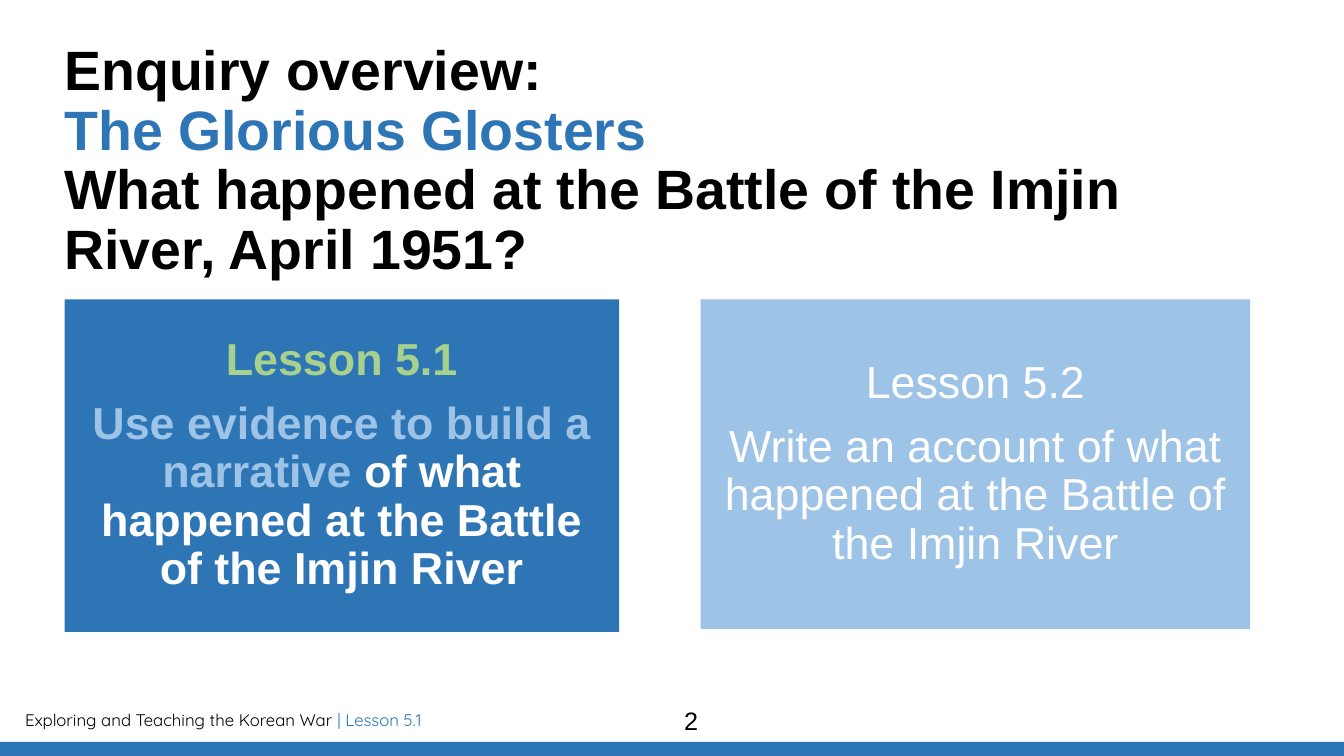
from pptx import Presentation
from pptx.dml.color import RGBColor
from pptx.enum.shapes import MSO_SHAPE
from pptx.enum.text import MSO_ANCHOR, MSO_AUTO_SIZE, PP_ALIGN
from pptx.util import Pt

RECT = MSO_SHAPE.RECTANGLE
TOP, MIDDLE = MSO_ANCHOR.TOP, MSO_ANCHOR.MIDDLE
LEFT, CENTER = PP_ALIGN.LEFT, PP_ALIGN.CENTER
FIXED = MSO_AUTO_SIZE.NONE
SCALE = 9144
BLUE, PALE, GREEN = "2E75B6", "9DC3E6", "A9D18E"
BLACK, WHITE = "000000", "FFFFFF"


def px(*sizes):
    return [size * SCALE for size in sizes]


def tint(target, color):
    target.rgb = RGBColor.from_string(color)


def style(para, size, name="Arial", bold=False, align=LEFT):
    para.alignment = align
    para.font.size = Pt(size)
    para.font.name = name
    para.font.bold = bold


def write(para, parts):
    for text, color in parts:
        run = para.add_run()
        run.text = text
        tint(run.font.color, color)


def pad(frame, size):
    frame.margin_left, frame.margin_top, frame.margin_right, frame.margin_bottom = px(*[size] * 4)


def heading(slide, area, lines):
    title = slide.shapes.title
    title.left, title.top, title.width, title.height = px(*area)
    frame = title.text_frame
    frame.word_wrap = True
    frame.auto_size = FIXED
    frame.vertical_anchor = TOP
    pad(frame, 0)
    para = frame.paragraphs[0]
    para.line_spacing = 0.9
    style(para, 39.6, bold=True)
    for index, line in enumerate(lines):
        if index:
            para.add_line_break()
        write(para, [line])


def block(slide, area, color):
    shape = slide.shapes.add_shape(RECT, *px(*area))
    shape.shadow.inherit = False
    shape.fill.solid()
    tint(shape.fill.fore_color, color)
    shape.line.fill.background()
    return shape


def card(slide, area, color, paras, bold=False):
    frame = block(slide, area, color).text_frame
    frame.word_wrap = True
    frame.vertical_anchor = MIDDLE
    pad(frame, 14)
    for index, parts in enumerate(paras):
        para = frame.add_paragraph() if index else frame.paragraphs[0]
        para.line_spacing = 0.9
        para.space_after = Pt(11)
        style(para, 32, bold=bold, align=CENTER)
        write(para, parts)


def label(slide, area, parts, size, name="Arial", align=LEFT):
    frame = slide.shapes.add_textbox(*px(*area)).text_frame
    frame.word_wrap = True
    para = frame.paragraphs[0]
    style(para, size, name, align=align)
    write(para, parts)


def main():
    deck = Presentation()
    deck.slide_width, deck.slide_height = px(1333, 750)
    slide = deck.slides.add_slide(deck.slide_layouts[5])
    label(slide, (15, 699, 782, 30),
          [("Exploring and Teaching the Korean War ", BLACK), ("| Lesson 5.1", BLUE)],
          12, "Quicksand")
    block(slide, (0, 736, 1333, 14), BLUE)
    heading(slide, (64, 42, 1150, 188), [
        ("Enquiry overview:", BLACK),
        ("The Glorious Glosters", BLUE),
        ("What happened at the Battle of the Imjin River, April 1951?", BLACK),
    ])
    card(slide, (695, 297, 545, 327), PALE, [
        [("Lesson 5.2", WHITE)],
        [("Write an account of what happened at the Battle of the Imjin River", WHITE)],
    ])
    label(slide, (432, 695, 507, 40), [("2", BLACK)], 18, align=CENTER)
    card(slide, (64, 297, 550, 330), BLUE, [
        [("Lesson 5.1", GREEN)],
        [("Use evidence to build a narrative ", PALE),
         ("of what happened at the Battle of the Imjin River", WHITE)],
    ], bold=True)
    deck.save("out.pptx")


if __name__ == "__main__":
    main()
